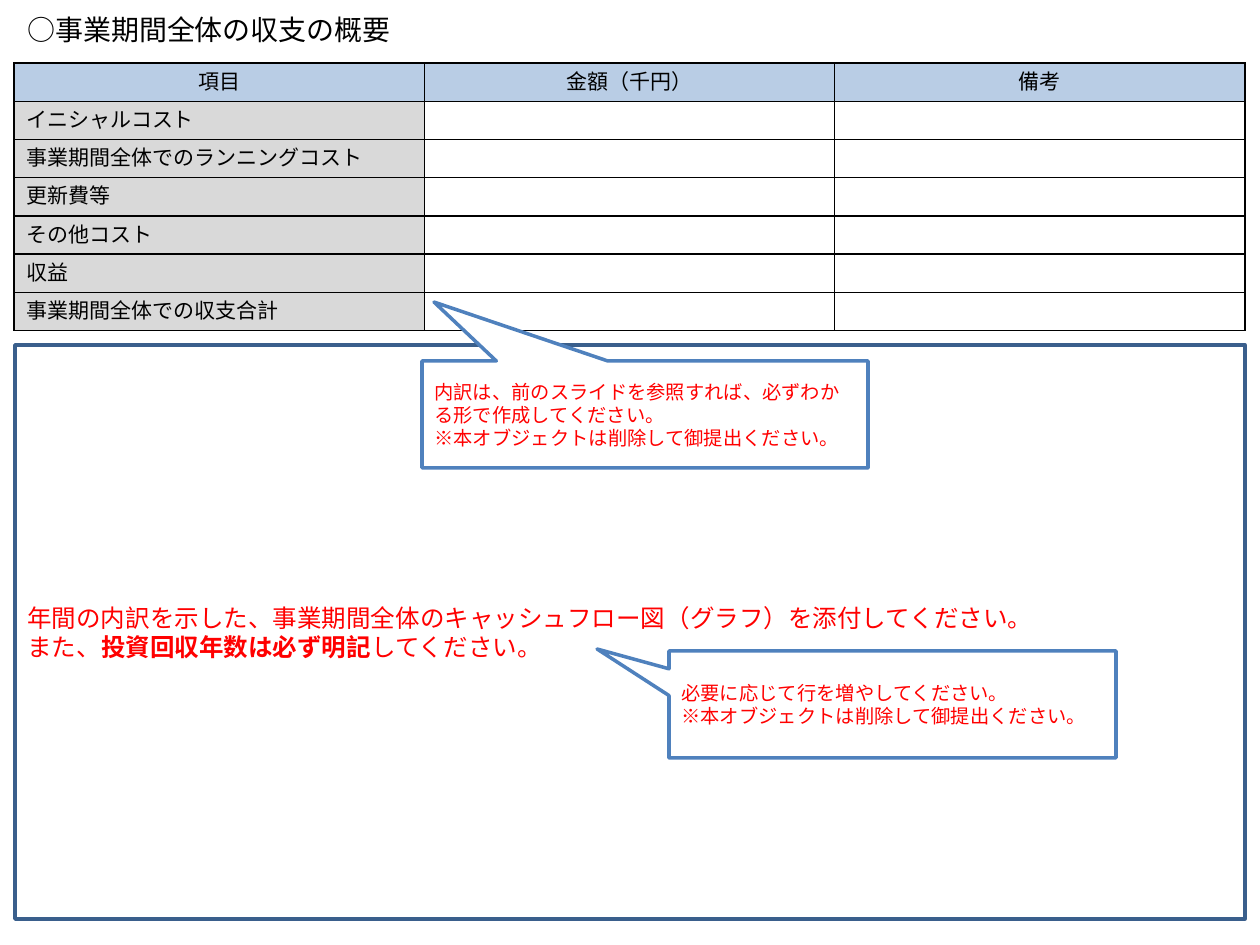
from lxml import etree
from pptx import Presentation
from pptx.dml.color import RGBColor
from pptx.enum.shapes import MSO_SHAPE
from pptx.enum.text import MSO_ANCHOR, MSO_AUTO_SIZE, PP_ALIGN
from pptx.oxml.ns import qn
from pptx.util import Pt

PX = 914400 // 126
MIDDLE = MSO_ANCHOR.MIDDLE
LEFT, CENTER = PP_ALIGN.LEFT, PP_ALIGN.CENTER
RECTANGLE, CALLOUT = MSO_SHAPE.RECTANGLE, MSO_SHAPE.RECTANGULAR_CALLOUT

BLACK = RGBColor(0x00, 0x00, 0x00)
WHITE = RGBColor(0xFF, 0xFF, 0xFF)
RED = RGBColor(0xFF, 0x00, 0x00)
HEADER_BLUE = RGBColor(0xB9, 0xCD, 0xE5)
LABEL_GREY = RGBColor(0xD9, 0xD9, 0xD9)
CALLOUT_BLUE = RGBColor(0x4F, 0x81, 0xBD)
FRAME_BLUE = RGBColor(0x3A, 0x5F, 0x8C)

TEXT_FONT = "Noto Sans CJK JP"
TABLE_FONT = "Calibri"
LINE_RATIO = 1.2

HEADERS = ["項目", "金額（千円）", "備考"]
ITEMS = ["イニシャルコスト", "事業期間全体でのランニングコスト", "更新費等",
         "その他コスト", "収益", "事業期間全体での収支合計"]
DELETE_NOTE = "※本オブジェクトは削除して御提出ください。"


def emu(box):
    return [length * PX for length in box]


def style_paragraph(para, name, size, color, align=LEFT):
    para.alignment = align
    font = para.font
    font.size = Pt(size)
    font.color.rgb = color
    font.name = name
    etree.SubElement(font._rPr, qn("a:ea"), typeface=name)


def write_lines(frame, lines, size, color):
    """Fill the frame; each line is a list of (text, bold) spans."""
    frame.word_wrap = True
    frame.vertical_anchor = MIDDLE
    for index, spans in enumerate(lines):
        para = frame.add_paragraph() if index else frame.paragraphs[0]
        style_paragraph(para, TEXT_FONT, size, color)
        para.line_spacing = Pt(round(size * LINE_RATIO, 1))
        for text, bold in spans:
            span = para.add_run()
            span.text = text
            span.font.bold = bold


def add_title(page, box):
    title = page.shapes.title
    title.left, title.top, title.width, title.height = emu(box)
    title.text_frame.auto_size = MSO_AUTO_SIZE.NONE
    write_lines(title.text_frame, [[("○事業期間全体の収支の概要", False)]], 16, BLACK)


def add_outlined_shape(page, kind, box, line_color):
    shape = page.shapes.add_shape(kind, *emu(box))
    shape.shadow.inherit = False
    shape.fill.background()
    shape.line.color.rgb = line_color
    shape.line.width = Pt(2)
    return shape


def add_callout(page, box, tip, lines):
    """Callout whose pointer ends at tip, in px from the box's top left."""
    callout = add_outlined_shape(page, CALLOUT, box, CALLOUT_BLUE)
    callout.fill.solid()
    callout.fill.fore_color.rgb = WHITE
    for index in range(2):
        callout.adjustments[index] = round(tip[index] / box[index + 2] - 0.5, 3)
    write_lines(callout.text_frame, [[(line, False)] for line in lines], 11, RED)


def add_cell_borders(cell):
    properties = cell._tc.get_or_add_tcPr()
    for index, side in enumerate(("lnL", "lnR", "lnT", "lnB")):
        line = etree.Element(qn(f"a:{side}"), w=str(Pt(1)))
        fill = etree.SubElement(line, qn("a:solidFill"))
        etree.SubElement(fill, qn("a:srgbClr"), val=str(BLACK))
        properties.insert(index, line)


def fill_cell(cell, text, color, align):
    para = cell.text_frame.paragraphs[0]
    style_paragraph(para, TABLE_FONT, 12, BLACK, align)
    if text:
        para.add_run().text = text
    else:
        etree.SubElement(para._p, qn("a:endParaRPr"), sz="1200")
    if color is None:
        cell.fill.background()
    else:
        cell.fill.solid()
        cell.fill.fore_color.rgb = color
    add_cell_borders(cell)


def add_balance_table(page, box):
    rows = [HEADERS] + [[item, "", ""] for item in ITEMS]
    table = page.shapes.add_table(len(rows), len(HEADERS), *emu(box)).table
    table.first_row = False
    table.horz_banding = False
    for row_index, texts in enumerate(rows):
        for column_index, text in enumerate(texts):
            color, align = None, LEFT
            if row_index == 0:
                color, align = HEADER_BLUE, CENTER
            elif column_index == 0:
                color = LABEL_GREY
            fill_cell(table.cell(row_index, column_index), text, color, align)


def add_cash_flow_frame(page, box):
    frame = add_outlined_shape(page, RECTANGLE, box, FRAME_BLUE)
    write_lines(frame.text_frame, [
        [("年間の内訳を示した、事業期間全体のキャッシュフロー図（グラフ）を添付してください。", False)],
        [("また、", False), ("投資回収年数は必ず明記", True), ("してください。", False)],
    ], 14, RED)


def main():
    deck = Presentation()
    deck.slide_width, deck.slide_height = emu((1260, 945))
    page = deck.slides.add_slide(deck.slide_layouts[5])
    add_title(page, (15, 6, 578, 47))
    add_callout(page, (669, 651, 447, 107), (-72, -2),
                ["必要に応じて行を増やしてください。", DELETE_NOTE])
    add_balance_table(page, (14, 63, 1231, 266))
    add_cash_flow_frame(page, (15, 345, 1230, 574))
    add_callout(page, (422, 361, 446, 107), (12, -59),
                ["内訳は、前のスライドを参照すれば、必ずわかる形で作成してください。", DELETE_NOTE])
    deck.save("out.pptx")


if __name__ == "__main__":
    main()
